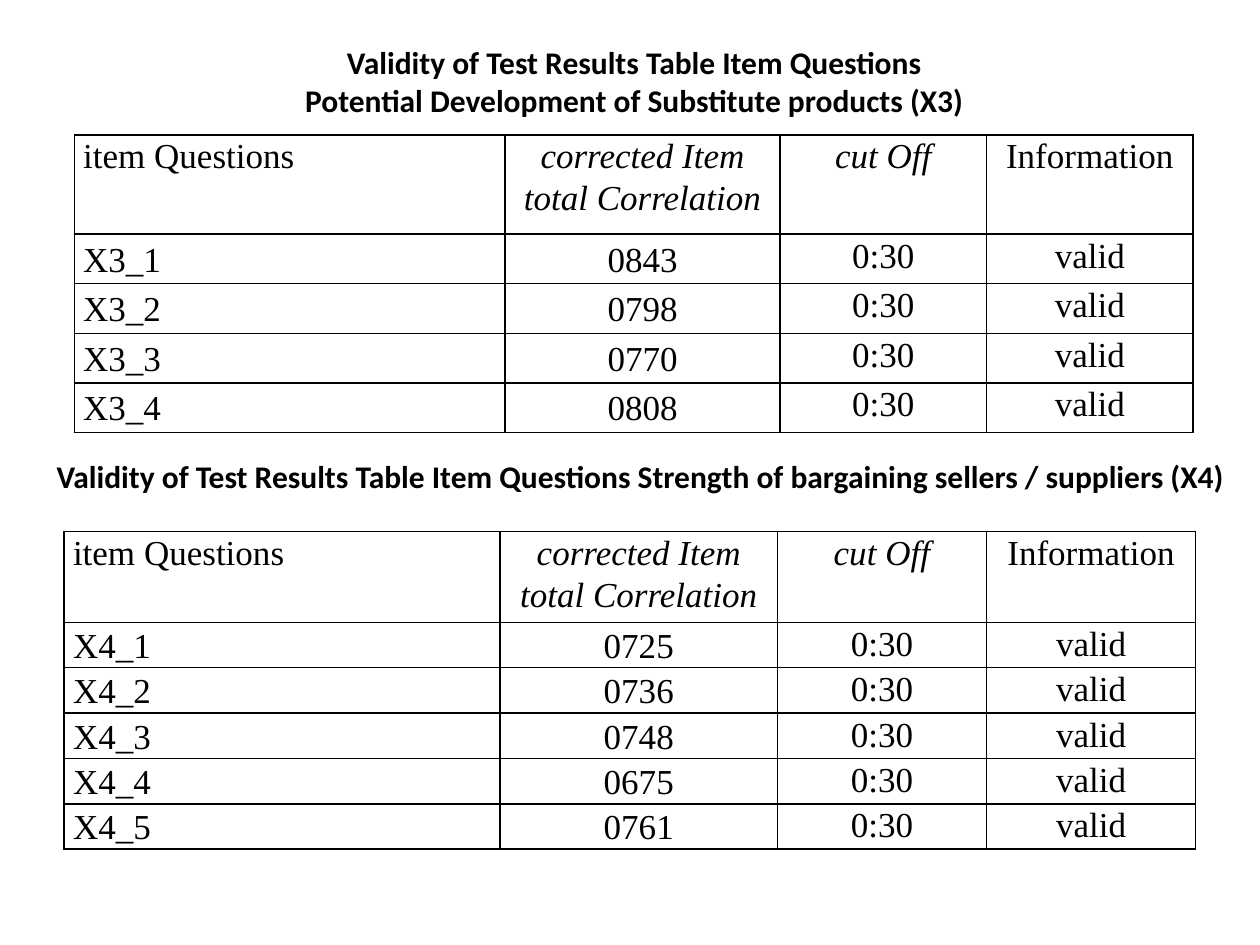
from lxml import etree
from pptx import Presentation
from pptx.dml.color import RGBColor
from pptx.enum.text import MSO_ANCHOR, MSO_AUTO_SIZE, PP_ALIGN
from pptx.oxml.ns import qn
from pptx.util import Inches, Pt

LEFT, CENTER = PP_ALIGN.LEFT, PP_ALIGN.CENTER
TOP, MIDDLE = MSO_ANCHOR.TOP, MSO_ANCHOR.MIDDLE
NO_AUTOFIT = MSO_AUTO_SIZE.NONE
TITLE_ONLY = 5

COLORS = {"text": "000000", "border": "000000", "cell": "FFFFFF"}
HEADING_FORMAT = {"font": "Calibri", "size": 18, "bold": True}
CELL_FORMAT = {"font": "Times New Roman", "size": 20, "line_spacing": 1.07}

HEADER = ["item Questions", "corrected Item\ntotal Correlation", "cut Off", "Information"]
ITALIC_HEADERS = HEADER[1:3]
CUT_OFF, VERDICT = "0:30", "valid"
SUBSTITUTE_CORRELATIONS = ["0843", "0798", "0770", "0808"]
SUPPLIER_CORRELATIONS = ["0725", "0736", "0748", "0675", "0761"]


def write_text(frame, text, font, size, bold=False, italic=False,
               align=LEFT, line_spacing=None):
    """Write each line of the text as one formatted paragraph."""
    for index, line in enumerate(text.split("\n")):
        paragraph = frame.paragraphs[0] if index == 0 else frame.add_paragraph()
        paragraph.alignment = align
        if line_spacing:
            paragraph.line_spacing = line_spacing
        run = paragraph.add_run()
        run.text = line
        run.font.name = font
        run.font.size = Pt(size)
        run.font.bold = bold
        run.font.italic = italic
        run.font.color.rgb = RGBColor.from_string(COLORS["text"])


def fill_heading(shape, text, box, align):
    shape.left, shape.top, shape.width, shape.height = map(Inches, box)
    frame = shape.text_frame
    frame.word_wrap = True
    frame.auto_size = NO_AUTOFIT
    frame.vertical_anchor = TOP
    write_text(frame, text, align=align, **HEADING_FORMAT)


def add_borders(cell):
    properties = cell._tc.get_or_add_tcPr()
    for position, side in enumerate(("a:lnL", "a:lnR", "a:lnT", "a:lnB")):
        line = etree.Element(qn(side), w=str(Pt(1)))
        fill = etree.SubElement(line, qn("a:solidFill"))
        etree.SubElement(fill, qn("a:srgbClr"), val=COLORS["border"])
        properties.insert(position, line)


def format_cell(cell, text, align, anchor):
    cell.margin_left = cell.margin_right = Inches(0.07)
    cell.margin_top = cell.margin_bottom = 0
    cell.vertical_anchor = anchor
    cell.fill.solid()
    cell.fill.fore_color.rgb = RGBColor.from_string(COLORS["cell"])
    add_borders(cell)
    write_text(cell.text_frame, text, align=align,
               italic=text in ITALIC_HEADERS, **CELL_FORMAT)


def add_validity_table(slide, variable, correlations, left, top,
                       column_widths, row_height):
    """Add a table with one row per question; the header is two rows high."""
    rows = [HEADER] + [[f"{variable}_{number}", correlation, CUT_OFF, VERDICT]
                       for number, correlation in enumerate(correlations, 1)]
    row_heights = [2 * row_height] + [row_height] * len(correlations)
    table = slide.shapes.add_table(
        len(rows), len(HEADER), Inches(left), Inches(top),
        Inches(sum(column_widths)), Inches(sum(row_heights))).table
    for column, width in zip(table.columns, column_widths):
        column.width = Inches(width)
    for row_index, (texts, height) in enumerate(zip(rows, row_heights)):
        table.rows[row_index].height = Inches(height)
        for column_index, text in enumerate(texts):
            align = LEFT if column_index == 0 else CENTER
            anchor = MIDDLE if row_index > 0 and column_index < 2 else TOP
            format_cell(table.cell(row_index, column_index), text, align, anchor)


def main():
    presentation = Presentation()
    presentation.slide_width, presentation.slide_height = Inches(10), Inches(7.5)
    slide = presentation.slides.add_slide(presentation.slide_layouts[TITLE_ONLY])

    fill_heading(slide.shapes.title,
                 "Validity of Test Results Table Item Questions\n"
                 "Potential Development of Substitute products (X3)",
                 (0.35, 0.29, 9.37, 0.71), CENTER)
    add_validity_table(slide, "X3", SUBSTITUTE_CORRELATIONS, 0.59, 1.07,
                       [3.42, 2.18, 1.64, 1.64], 0.394)

    fill_heading(slide.shapes.add_textbox(0, 0, 0, 0),
                 "Validity of Test Results Table Item Questions "
                 "Strength of bargaining sellers / suppliers (X4)",
                 (0.35, 3.58, 9.65, 0.4), LEFT)
    add_validity_table(slide, "X4", SUPPLIER_CORRELATIONS, 0.51, 4.22,
                       [3.46, 2.2, 1.66, 1.66], 0.36)

    presentation.save("out.pptx")


if __name__ == "__main__":
    main()
